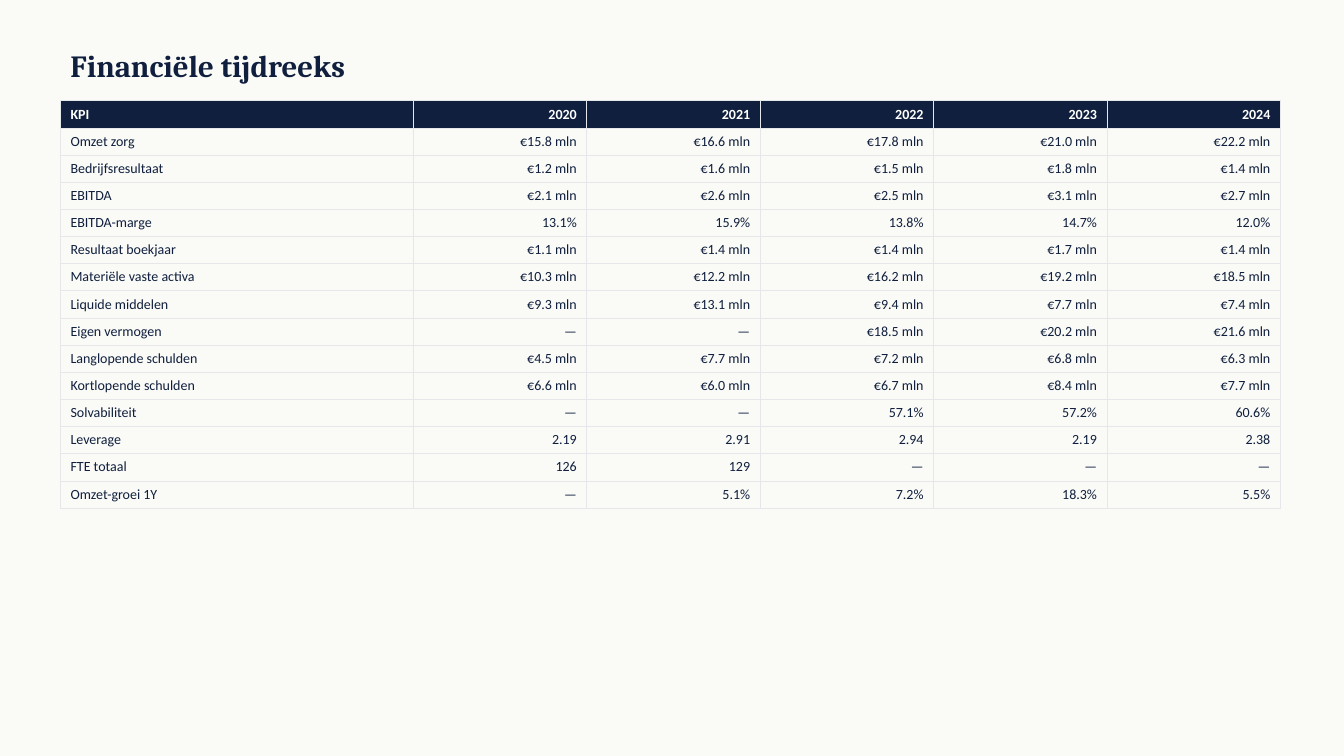
from lxml import etree
from pptx import Presentation
from pptx.dml.color import RGBColor
from pptx.enum.text import MSO_ANCHOR, PP_ALIGN
from pptx.oxml.ns import qn
from pptx.util import Inches, Pt

LEFT, RIGHT = PP_ALIGN.LEFT, PP_ALIGN.RIGHT
MIDDLE = MSO_ANCHOR.MIDDLE

NAVY = RGBColor(0x0F, 0x1F, 0x3D)
WHITE = RGBColor(0xFF, 0xFF, 0xFF)
PAPER = RGBColor(0xFA, 0xFA, 0xF7)
RULE = RGBColor(0xE5, 0xE7, 0xEB)

KPI_SHARE = 3.5 / 12.1  # share of the table width taken by the KPI column

HEADER = ["KPI", "2020", "2021", "2022", "2023", "2024"]
KPIS = [
    ["Omzet zorg", "€15.8 mln", "€16.6 mln", "€17.8 mln", "€21.0 mln", "€22.2 mln"],
    ["Bedrijfsresultaat", "€1.2 mln", "€1.6 mln", "€1.5 mln", "€1.8 mln", "€1.4 mln"],
    ["EBITDA", "€2.1 mln", "€2.6 mln", "€2.5 mln", "€3.1 mln", "€2.7 mln"],
    ["EBITDA-marge", "13.1%", "15.9%", "13.8%", "14.7%", "12.0%"],
    ["Resultaat boekjaar", "€1.1 mln", "€1.4 mln", "€1.4 mln", "€1.7 mln", "€1.4 mln"],
    ["Materiële vaste activa", "€10.3 mln", "€12.2 mln", "€16.2 mln", "€19.2 mln", "€18.5 mln"],
    ["Liquide middelen", "€9.3 mln", "€13.1 mln", "€9.4 mln", "€7.7 mln", "€7.4 mln"],
    ["Eigen vermogen", "—", "—", "€18.5 mln", "€20.2 mln", "€21.6 mln"],
    ["Langlopende schulden", "€4.5 mln", "€7.7 mln", "€7.2 mln", "€6.8 mln", "€6.3 mln"],
    ["Kortlopende schulden", "€6.6 mln", "€6.0 mln", "€6.7 mln", "€8.4 mln", "€7.7 mln"],
    ["Solvabiliteit", "—", "—", "57.1%", "57.2%", "60.6%"],
    ["Leverage", "2.19", "2.91", "2.94", "2.19", "2.38"],
    ["FTE totaal", "126", "129", "—", "—", "—"],
    ["Omzet-groei 1Y", "—", "5.1%", "7.2%", "18.3%", "5.5%"],
]


def write(frame, text, font_name, size, color, bold=False, align=LEFT):
    paragraph = frame.paragraphs[0]
    paragraph.text = text
    paragraph.alignment = align
    font = paragraph.runs[0].font
    font.name, font.size, font.bold = font_name, Pt(size), bold
    font.color.rgb = color


def add_borders(cell):
    properties = cell._tc.get_or_add_tcPr()
    for side in ("lnL", "lnR", "lnT", "lnB"):
        line = etree.SubElement(properties, qn(f"a:{side}"), w=str(Pt(0.5)))
        fill = etree.SubElement(line, qn("a:solidFill"))
        etree.SubElement(fill, qn("a:srgbClr"), val=str(RULE))


def add_title(slide, left, top, width, height):
    title = slide.shapes.add_textbox(left, top, width, height).text_frame
    title.word_wrap = True
    title.vertical_anchor = MIDDLE
    write(title, "Financiële tijdreeks", "Cambria", 22, NAVY, bold=True)


def add_kpi_table(slide, left, top, width, height):
    rows = [HEADER] + KPIS
    table = slide.shapes.add_table(
        len(rows), len(HEADER), left, top, width, height).table
    table.horz_banding = False

    # One wide KPI column, then equal year columns
    kpi_width = round(width * KPI_SHARE)
    for index, column in enumerate(table.columns):
        column.width = (width - kpi_width) // (len(HEADER) - 1) if index else kpi_width

    for r, values in enumerate(rows):
        is_header = r == 0
        for c, value in enumerate(values):
            cell = table.cell(r, c)
            add_borders(cell)
            if is_header:
                cell.fill.solid()
                cell.fill.fore_color.rgb = NAVY
            else:
                cell.fill.background()
            write(cell.text_frame, value, "Calibri", 10,
                  WHITE if is_header else NAVY, is_header, RIGHT if c else LEFT)


def main():
    deck = Presentation()
    deck.slide_width, deck.slide_height = Inches(13.33), Inches(7.5)
    slide = deck.slides.add_slide(deck.slide_layouts[6])
    slide.background.fill.solid()
    slide.background.fill.fore_color.rgb = PAPER

    margin = Inches(0.6)
    add_title(slide, margin, Inches(0.4), Inches(12), Inches(0.5))
    add_kpi_table(slide, margin, Inches(1), Inches(12.1), Inches(4.04))
    deck.save("out.pptx")


if __name__ == "__main__":
    main()
